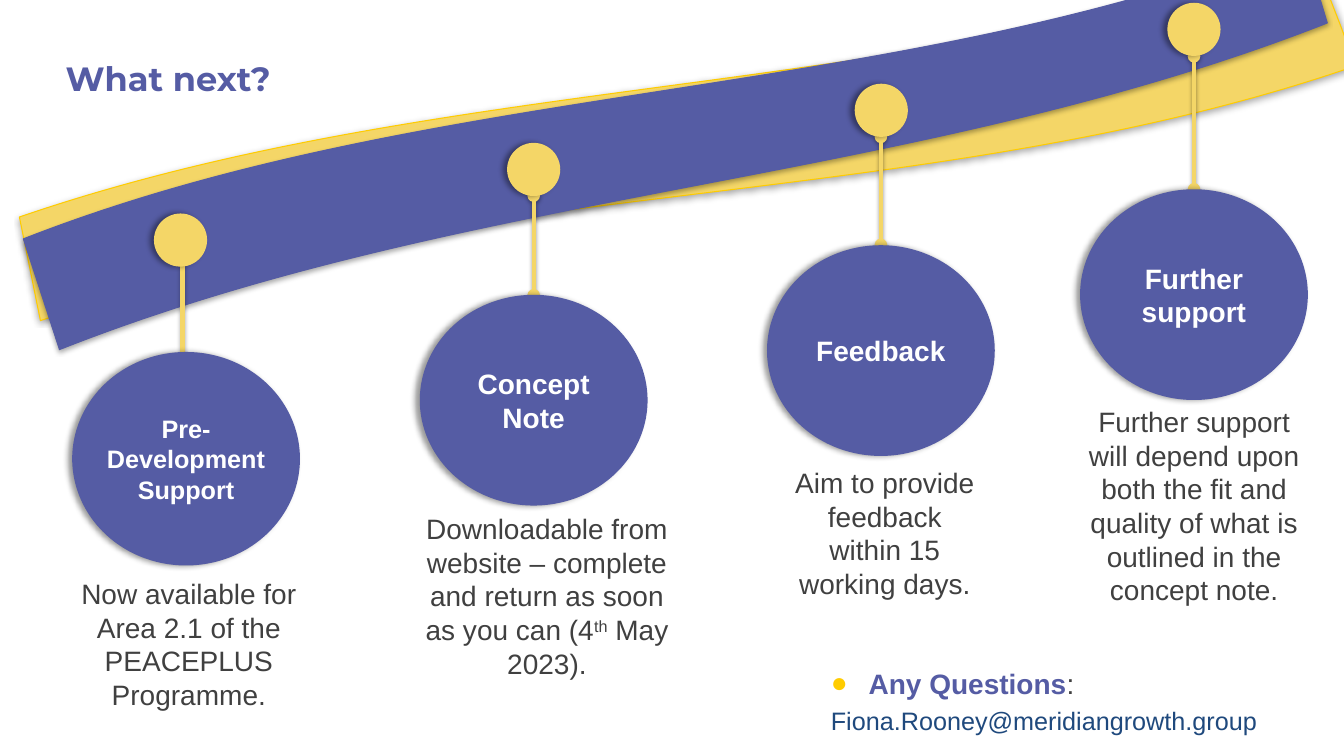
"""Builds the "What next?" slide: a rising ribbon with four milestones."""
from lxml.etree import SubElement
from pptx import Presentation
from pptx.dml.color import RGBColor
from pptx.enum.shapes import MSO_CONNECTOR, MSO_SHAPE
from pptx.enum.text import MSO_ANCHOR, MSO_AUTO_SIZE, PP_ALIGN
from pptx.oxml.ns import qn
from pptx.util import Cm, Pt

COLOURS = {"violet": "555CA4", "yellow": "F4D667", "gold": "FFCC00",
           "grey": "404040", "navy": "1F497D", "white": "FFFFFF", "black": "000000"}

TITLE = "What next?"
QUESTIONS = ("Any Questions", ":")
EMAIL = "Fiona.Rooney@meridiangrowth.group"

RIBBONS = [
    {"fill": "yellow", "line": "gold", "start": (0.49, 5.47), "curves": [
        [(11.1, 1.83), (22.56, 2.51), (33.17, -1.14)],
        [(33.35, -0.25), (33.93, 0.81), (34.11, 1.68)],
        [(23.52, 5.33), (11.61, 4.45), (1.02, 8.08)]]},
    {"fill": "violet", "line": "violet", "start": (0.59, 6.02), "curves": [
        [(10.97, 1.96), (22.43, 2.62), (32.82, -1.45)],
        [(33.1, -0.53), (33.17, -0.36), (33.45, 0.58)],
        [(23.09, 4.65), (11.86, 4.72), (1.5, 8.81)]]},
]

MILESTONES = [
    {"name": "Pre-Development Support", "size": 18, "stem": (4.6, 6.17, 10.59),
     "dot": (3.88, 5.38), "circle": (1.82, 8.87, 5.74, 5.38),
     "caption_box": (1.32, 14.4, 6.88, 3.68),
     "caption": ["Now available for Area 2.1 of the PEACEPLUS Programme."]},
    {"name": "Concept Note", "size": 20, "stem": (13.45, 4.93, 7.44),
     "dot": (12.78, 3.6), "circle": (10.58, 7.43, 5.74, 5.31),
     "caption_box": (10.19, 12.77, 7.19, 4.52),
     "caption": ["Downloadable from website – complete and return as soon as you can (4",
                 "th", " May 2023)."]},
    {"name": "Feedback", "size": 20, "stem": (22.2, 3.45, 6.17),
     "dot": (21.54, 2.11), "circle": (19.33, 6.18, 5.74, 5.31),
     "caption_box": (19.72, 11.61, 5.16, 3.68),
     "caption": ["Aim to provide feedback within 15 working days."]},
    {"name": "Further support", "size": 20, "stem": (30.09, 1.42, 4.77),
     "dot": (29.42, 0.07), "circle": (27.22, 4.77, 5.74, 5.31),
     "caption_box": (27.06, 10.07, 6.07, 5.38),
     "caption": ["Further support will depend upon both the fit and quality of what is "
                 "outlined in the concept note."]},
]

DOT_SIZE = 1.34
RIBBON_SHADOW = (35, 3.1, 1.8, 90)
STEM_SHADOW = (38, 3.1, 1.6, 90)
CIRCLE_SHADOW = (40, 4, 3, 180)


def colour(name):
    """Return a palette colour."""
    return RGBColor.from_string(COLOURS[name])


def place(lengths):
    """Convert centimetres to slide lengths."""
    return [Cm(length) for length in lengths]


def add_shadow(shape, opacity, blur, distance, angle):
    """Add an outer shadow after the fill and line are set."""
    effects = SubElement(shape._element.spPr, qn("a:effectLst"))
    outer = SubElement(effects, qn("a:outerShdw"), blurRad=str(Pt(blur)),
                       dist=str(Pt(distance)), dir=str(angle * 60000),
                       algn="ctr", rotWithShape="0")
    tint = SubElement(outer, qn("a:srgbClr"), val=COLOURS["black"])
    SubElement(tint, qn("a:alpha"), val=str(opacity * 1000))


def add_span(para, text, size, tone, bold=False, font="Arial"):
    """Append a formatted run."""
    span = para.add_run()
    span.text = text
    span.font.name, span.font.size, span.font.bold = font, Pt(size), bold
    span.font.color.rgb = colour(tone)
    return span


def bend(shape):
    """Turn each three straight segments into one cubic curve."""
    segments = list(shape._element.iter(qn("a:lnTo")))
    for first in range(0, len(segments), 3):
        curve = segments[first].makeelement(qn("a:cubicBezTo"))
        segments[first].addprevious(curve)
        for segment in segments[first:first + 3]:
            curve.append(segment[0])
            segment.getparent().remove(segment)


def add_ribbon(page, ribbon):
    """Draw one curved band."""
    builder = page.shapes.build_freeform(*place(ribbon["start"]))
    points = [place(point) for curve in ribbon["curves"] for point in curve]
    builder.add_line_segments(points, close=True)
    band = builder.convert_to_shape()
    bend(band)
    band.fill.solid()
    band.fill.fore_color.rgb = colour(ribbon["fill"])
    band.line.color.rgb = colour(ribbon["line"])
    band.line.width = Pt(0.75)
    add_shadow(band, *RIBBON_SHADOW)


def add_disc(page, bounds, tone):
    """Draw a filled ellipse with a shadow on its left."""
    disc = page.shapes.add_shape(MSO_SHAPE.OVAL, *place(bounds))
    disc.fill.solid()
    disc.fill.fore_color.rgb = colour(tone)
    disc.line.fill.background()
    add_shadow(disc, *CIRCLE_SHADOW)
    return disc


def add_milestone(page, milestone):
    """Draw the stem, dot, named circle and caption of a milestone."""
    box = page.shapes.add_textbox(*place(milestone["caption_box"]))
    box.text_frame.word_wrap = True
    box.text_frame.auto_size = MSO_AUTO_SIZE.SHAPE_TO_FIT_TEXT
    para = box.text_frame.paragraphs[0]
    para.alignment = PP_ALIGN.CENTER
    for text in milestone["caption"]:
        span = add_span(para, text, 20, "grey")
        if text == "th":
            span._r.get_or_add_rPr().set("baseline", "30000")

    x, top, bottom = milestone["stem"]
    stem = page.shapes.add_connector(MSO_CONNECTOR.STRAIGHT, *place((x, top, x, bottom)))
    stem.line.color.rgb = colour("yellow")
    stem.line.width = Pt(3)
    for end in ("a:headEnd", "a:tailEnd"):
        SubElement(stem.get_or_add_ln(), qn(end), type="oval")
    add_shadow(stem, *STEM_SHADOW)

    add_disc(page, (*milestone["dot"], DOT_SIZE, DOT_SIZE), "yellow")
    frame = add_disc(page, milestone["circle"], "violet").text_frame
    frame.word_wrap = True
    frame.vertical_anchor = MSO_ANCHOR.MIDDLE
    frame.margin_left = frame.margin_right = frame.margin_top = frame.margin_bottom = 0
    frame.paragraphs[0].alignment = PP_ALIGN.CENTER
    add_span(frame.paragraphs[0], milestone["name"], milestone["size"], "white", True)


def add_title(page):
    """Place and format the title."""
    title = page.shapes.title
    title.left, title.top, title.width, title.height = place((1.4, 0.38, 16.71, 3.18))
    title.text_frame.vertical_anchor = MSO_ANCHOR.MIDDLE
    para = title.text_frame.paragraphs[0]
    para.alignment = PP_ALIGN.LEFT
    add_span(para, TITLE, 24, "violet", True, "Montserrat")


def add_contact(page):
    """Add the bulleted invitation and the address."""
    frame = page.shapes.add_textbox(*place((20.69, 16.66, 12.27, 1.6))).text_frame
    frame.word_wrap = True
    para = frame.paragraphs[0]
    properties = para._p.get_or_add_pPr()
    properties.set("marL", str(Cm(0.95)))
    properties.set("indent", str(Cm(-0.95)))
    tint = SubElement(properties, qn("a:buClr"))
    SubElement(tint, qn("a:srgbClr"), val=COLOURS["gold"])
    SubElement(properties, qn("a:buFont"), typeface="Arial")
    SubElement(properties, qn("a:buChar"), char="●")
    label, colon = QUESTIONS
    add_span(para, label, 20, "violet", True)
    add_span(para, colon, 20, "grey")
    address = frame.add_paragraph()
    address.space_before = Pt(4)
    add_span(address, EMAIL, 18, "navy")


def main():
    """Build and save the deck."""
    deck = Presentation()
    deck.slide_width, deck.slide_height = Cm(33.87), Cm(19.05)
    page = deck.slides.add_slide(deck.slide_layouts[5])
    add_contact(page)
    add_title(page)
    for ribbon in RIBBONS:
        add_ribbon(page, ribbon)
    for milestone in MILESTONES:
        add_milestone(page, milestone)
    deck.save("out.pptx")


if __name__ == "__main__":
    main()
